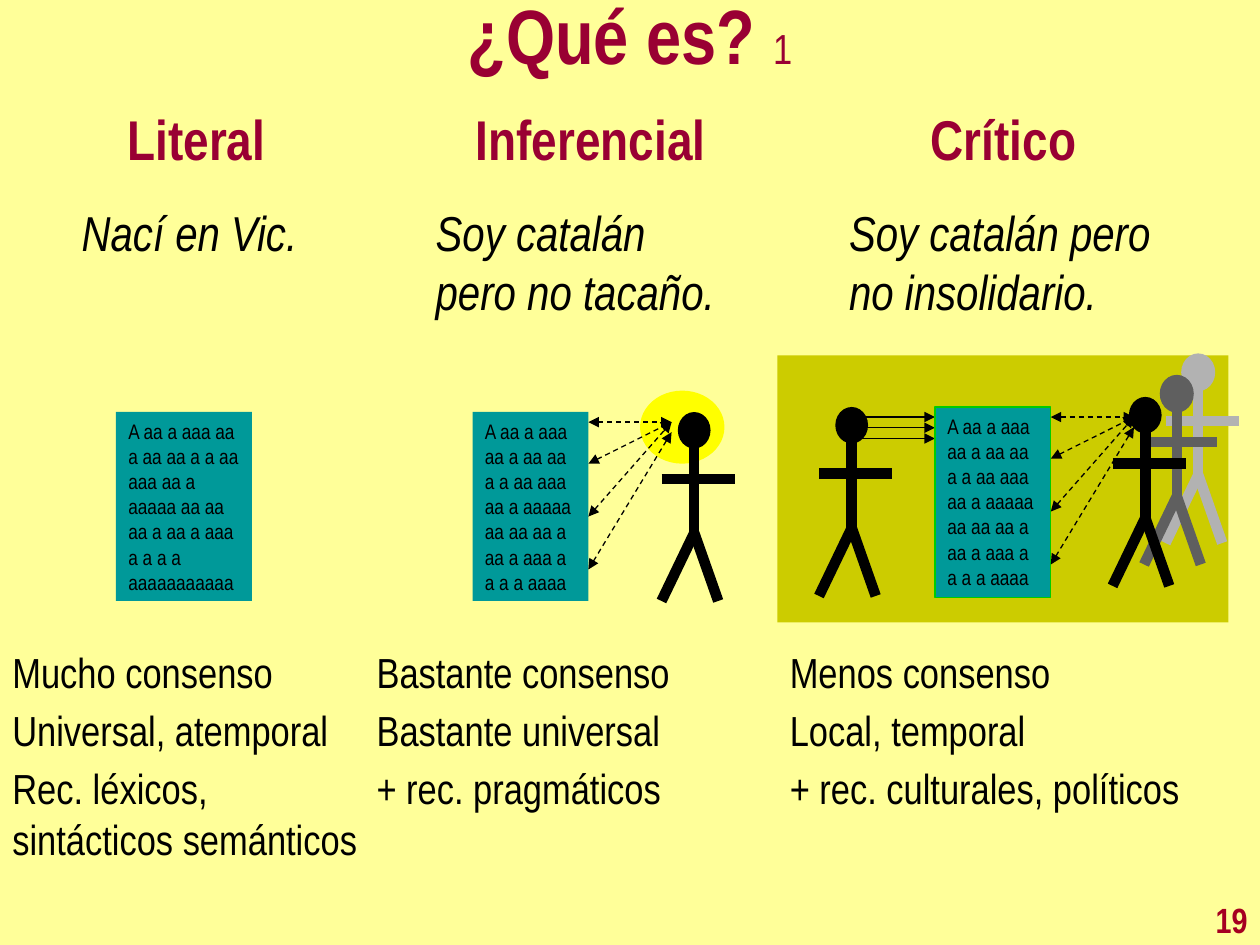
import pptx
import pptx.dml.color
import pptx.enum.dml
import pptx.enum.shapes
import pptx.enum.text
import pptx.oxml.ns
import pptx.util
from lxml import etree

Inches = pptx.util.Inches
Pt = pptx.util.Pt
SHAPE = pptx.enum.shapes.MSO_SHAPE
ALIGN = pptx.enum.text.PP_ALIGN
ANCHOR = pptx.enum.text.MSO_ANCHOR

BLACK, MAROON, TEAL = "000000", "990033", "009999"
HEADING = {"size": Pt(32), "bold": True}
EXAMPLE = {"size": Pt(28), "italic": True}
SHEET_TEXT = "A aa a aaa aa a aa aa a a aa aaa aa a aaaaa aa aa aa a aa a aaa a a a a aaaa"


def color(value):
    return pptx.dml.color.RGBColor.from_string(value)


def format_font(font, ink, values):
    font.name = "Arial Narrow"
    font.color.rgb = color(ink)
    for name, value in values.items():
        setattr(font, name, value)


def fill_text(frame, lines, ink, values, align=ALIGN.LEFT, gap=0):
    frame.word_wrap = True
    for index, line in enumerate(lines):
        paragraph = frame.paragraphs[0] if index == 0 else frame.add_paragraph()
        paragraph.alignment = align
        paragraph.space_before = Pt(gap if index else 0)
        run = paragraph.add_run()
        run.text = line
        format_font(run.font, ink, values)


def add_text(slide, box, lines, ink, values, align=ALIGN.LEFT, gap=0):
    frame = slide.shapes.add_textbox(*map(Inches, box)).text_frame
    fill_text(frame, lines, ink, values, align, gap)
    return frame


def add_block(slide, kind, box, fill, outline=None):
    block = slide.shapes.add_shape(kind, *map(Inches, box))
    block.shadow.inherit = False
    block.fill.solid()
    block.fill.fore_color.rgb = color(fill)
    if outline:
        block.line.color.rgb = color(outline)
        block.line.width = Pt(0.75)
    else:
        block.line.fill.background()
    return block


def add_line(slide, start, end, ink=BLACK, width=0.75, dashed=False, arrows=()):
    line = slide.shapes.add_connector(
        pptx.enum.shapes.MSO_CONNECTOR.STRAIGHT, *map(Inches, (*start, *end)))
    line.line.color.rgb = color(ink)
    line.line.width = Pt(width)
    if dashed:
        line.line.dash_style = pptx.enum.dml.MSO_LINE.DASH
    outline = line.line._get_or_add_ln()
    for arrow in arrows:
        etree.SubElement(outline, pptx.oxml.ns.qn("a:" + arrow), type="triangle")
    etree.SubElement(line._element.spPr, pptx.oxml.ns.qn("a:effectLst"))


def add_sheet(slide, box, text, outline=None):
    sheet = add_block(slide, SHAPE.RECTANGLE, box, TEAL, outline)
    sheet.text_frame.vertical_anchor = ANCHOR.TOP
    fill_text(sheet.text_frame, [text], BLACK, {"size": Pt(12)})


def add_person(slide, left, top, ink=BLACK, outline=None):
    add_block(slide, SHAPE.OVAL, (left + 0.13, top, 0.26, 0.29), ink, outline)
    middle, hip, foot = left + 0.26, top + 0.96, top + 1.5
    limbs = [
        ((middle, top + 0.14), (middle, top + 1.01)),          # body
        ((middle, hip), (left + 0.45, foot)),                  # right leg
        ((middle, hip), (left, foot)),                         # left leg
        ((left, top + 0.53), (left + 0.58, top + 0.53)),       # arms
    ]
    for start, end in limbs:
        add_line(slide, start, end, ink, 6)


def add_reading_arrows(slide, left, top):
    """Dashed two-way arrows between a sheet's right edge and the reader's eye."""
    for sheet_y, eye_y in [(0.08, 0.08), (0.83, 0.08), (0.41, 0.08), (1.25, 0.16)]:
        add_line(slide, (left, top + sheet_y), (left + 0.66, top + eye_y),
                 dashed=True, arrows=("headEnd", "tailEnd"))


def add_literal_scene(slide, left, top):
    add_sheet(slide, (left, top, 1.08, 1.5), SHEET_TEXT + " aaaaaaa".lstrip(" "))


def add_inferential_scene(slide, left, top):
    reader = left + 1.5
    add_block(slide, SHAPE.OVAL, (reader - 0.17, top - 0.17, 0.67, 0.58), "FFFF00")
    add_person(slide, reader, top)
    add_sheet(slide, (left, top, 0.92, 1.5), SHEET_TEXT)
    add_reading_arrows(slide, left + 0.92, top)


def add_critical_scene(slide, left, top):
    add_block(slide, SHAPE.RECTANGLE, (left, top, 3.58, 2.12), "CCCC00")
    sheet_left, sheet_top = left + 1.25, top + 0.41
    # Author and the arrows to the sheet
    add_person(slide, left + 0.33, sheet_top)
    for row in range(3):
        y = sheet_top + 0.08 + row * 0.085
        add_line(slide, (sheet_left - 0.67, y), (sheet_left, y), arrows=("tailEnd",))
    # Readers behind, sheet, reader in front
    for dx, dy, gray in [(3.08, -0.01, "B2B2B2"), (2.91, 0.16, "5F5F5F")]:
        add_person(slide, left + dx, top + dy, gray, gray)
    add_sheet(slide, (sheet_left, sheet_top, 0.92, 1.51), SHEET_TEXT, "00CC00")
    add_person(slide, left + 2.66, top + 0.33)
    add_reading_arrows(slide, sheet_left + 0.92, sheet_top)


def add_title(slide, box):
    title = add_text(slide, box, ["¿Qué es? "], MAROON,
                     {"size": Pt(44), "bold": True}, ALIGN.CENTER)
    title.vertical_anchor = ANCHOR.MIDDLE
    title.paragraphs[0].line_spacing = 0.8
    part = title.paragraphs[0].add_run()
    part.text = "1"
    format_font(part.font, MAROON, {"size": Pt(24), "bold": False})


def add_level(slide, heading, example, features):
    """One reading level; each argument is (left, width, wording)."""
    left, width, wording = heading
    add_text(slide, (left, 0.78, width, 0.63), [wording], MAROON, HEADING, ALIGN.CENTER)
    left, width, wording = example
    add_text(slide, (left, 1.56, width, 1.04), [wording], BLACK, EXAMPLE)
    left, width, lines = features
    add_text(slide, (left, 5.08, width, 1.47), lines, BLACK, {"size": Pt(24)}, gap=4.5)


def main():
    deck = pptx.Presentation()
    deck.slide_width, deck.slide_height = Inches(10), Inches(7.5)
    slide = deck.slides.add_slide(deck.slide_layouts[6])
    slide.background.fill.solid()
    slide.background.fill.fore_color.rgb = color("FFFF99")

    add_title(slide, (0, 0, 10, 0.67))
    add_level(slide, (0.31, 2.5, "Literal"), (0.55, 2.03, "Nací en Vic."),
              (0, 2.97, ["Mucho consenso", "Universal, atemporal",
                         "Rec. léxicos, sintácticos semánticos"]))
    add_level(slide, (3.36, 2.66, "Inferencial"),
              (3.36, 2.5, "Soy catalán pero no tacaño."),
              (2.89, 3.05, ["Bastante consenso", "Bastante universal",
                            "+ rec. pragmáticos"]))
    add_level(slide, (6.8, 2.33, "Crítico"),
              (6.64, 2.89, "Soy catalán pero no insolidario."),
              (6.17, 3.54, ["Menos consenso", "Local, temporal",
                            "+ rec. culturales, políticos"]))

    add_literal_scene(slide, 0.92, 3.27)
    add_inferential_scene(slide, 3.75, 3.27)
    add_critical_scene(slide, 6.17, 2.82)

    # Page number
    add_text(slide, (9.25, 7.08, 0.75, 0.42), ["19"], "A50021",
             {"size": Pt(20), "bold": True}, ALIGN.RIGHT)
    deck.save("out.pptx")


if __name__ == "__main__":
    main()
